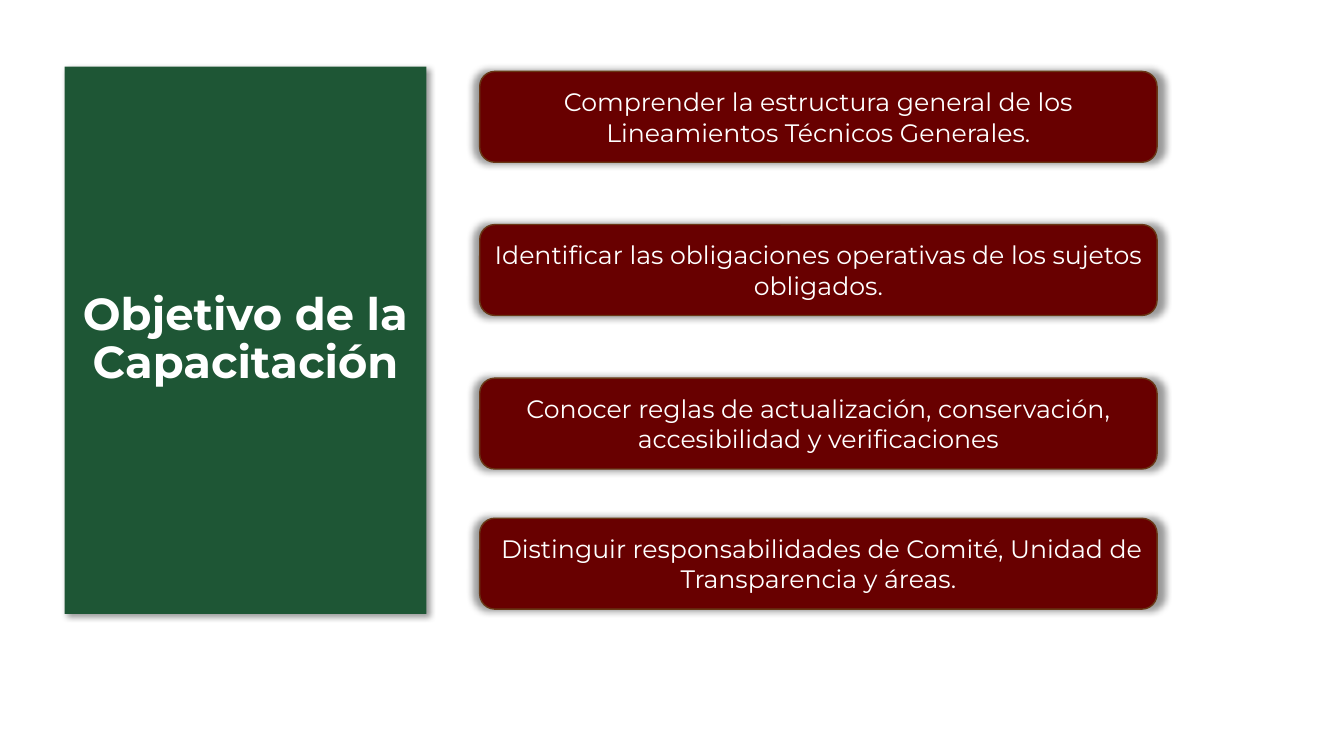
import dataclasses

import lxml.etree
import pptx
import pptx.dml.color
import pptx.enum.shapes
import pptx.enum.text
import pptx.oxml
import pptx.oxml.ns
import pptx.util

Cm = pptx.util.Cm
Pt = pptx.util.Pt
SHAPES = pptx.enum.shapes.MSO_SHAPE


@dataclasses.dataclass(frozen=True)
class Theme:
    font: str = "Montserrat"
    green: str = "1E5635"
    maroon: str = "680000"
    border: str = "683715"
    white: str = "FFFFFF"
    shadow: str = "000000"
    title_size: int = 32
    body_size: int = 18


class Deck:
    def __init__(self, prs, theme):
        self.theme = theme
        self.s = prs.slides.add_slide(prs.slide_layouts[6])

    def color(self, value):
        return pptx.dml.color.RGBColor.from_string(value)

    def box(self, kind, left, top, width, height, fill):
        sp = self.s.shapes.add_shape(kind, Cm(left), Cm(top), Cm(width), Cm(height))
        sp.fill.solid()
        sp.fill.fore_color.rgb = self.color(fill)
        return sp

    def label(self, sp, text, size, bold=False):
        tf = sp.text_frame
        tf.word_wrap = True
        tf.vertical_anchor = pptx.enum.text.MSO_ANCHOR.MIDDLE
        tf.text = text
        p = tf.paragraphs[0]
        p.alignment = pptx.enum.text.PP_ALIGN.CENTER
        r = p.runs[0]
        r.font.name = self.theme.font
        r.font.size = Pt(size)
        r.font.bold = bold
        r.font.color.rgb = self.color(self.theme.white)
        return p

    def shadow(self, sp, blur, **placement):
        sp.shadow.inherit = False
        qn = pptx.oxml.ns.qn
        effects = sp.element.spPr.find(qn("a:effectLst"))
        outer = lxml.etree.SubElement(effects, qn("a:outerShdw"), blurRad=str(Pt(blur)))
        for name, value in placement.items():
            outer.set(name, str(value))
        color = lxml.etree.SubElement(outer, qn("a:srgbClr"), val=self.theme.shadow)
        lxml.etree.SubElement(color, qn("a:alpha"), val="40000")

    def title(self, text, left, top, width, height):
        sp = self.box(SHAPES.RECTANGLE, left, top, width, height, self.theme.green)
        sp.line.fill.background()
        self.shadow(sp, 4, dist=Pt(3), dir=2700000, algn="tl", rotWithShape=0)
        p = self.label(sp, text, self.theme.title_size, bold=True)
        p.line_spacing = 0.9

    def goal(self, text, left, top, width, height):
        kind = SHAPES.FLOWCHART_ALTERNATE_PROCESS
        sp = self.box(kind, left, top, width, height, self.theme.maroon)
        sp.line.color.rgb = self.color(self.theme.border)
        sp.line.width = Pt(1)
        self.shadow(sp, 5, sx=102000, sy=102000, algn="ctr", rotWithShape=0)
        self.label(sp, text, self.theme.body_size)


def main():
    prs = pptx.Presentation()
    prs.slide_width = Cm(33.87)
    prs.slide_height = Cm(19.05)
    deck = Deck(prs, Theme())
    deck.title("Objetivo de la Capacitación", 1.63, 1.68, 9.12, 13.79)
    goals = {
        1.8: "Comprender la estructura general de los Lineamientos Técnicos Generales.",
        5.66: "Identificar las obligaciones operativas de los sujetos obligados.",
        9.53: "Conocer reglas de actualización, conservación, accesibilidad y verificaciones",
        13.06: " Distinguir responsabilidades de Comité, Unidad de Transparencia y áreas.",
    }
    for top, text in goals.items():
        deck.goal(text, 12.09, top, 17.07, 2.29)
    prs.save("out.pptx")


if __name__ == "__main__":
    main()
